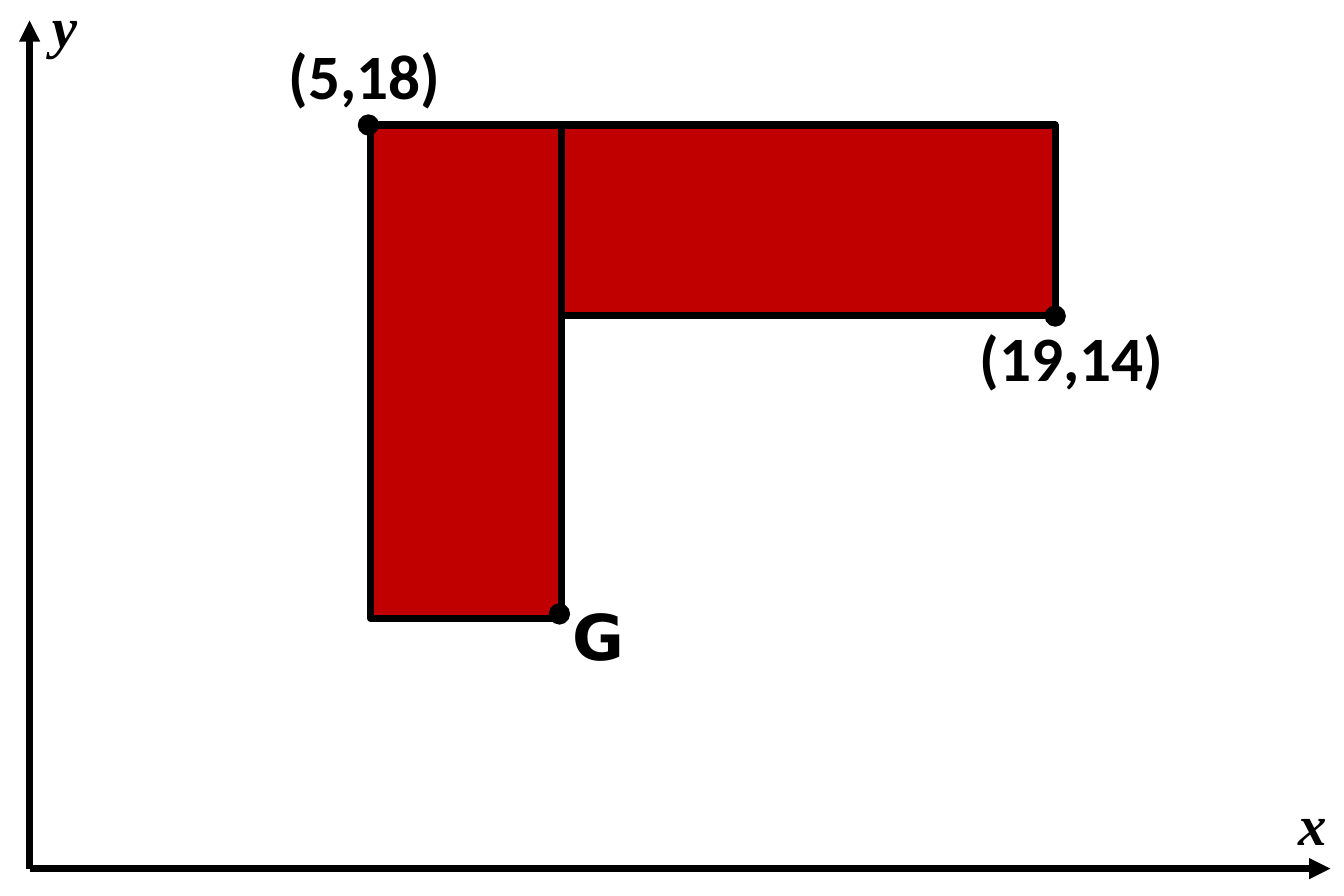
from pptx import Presentation
from pptx.dml.color import RGBColor
from pptx.enum.shapes import MSO_CONNECTOR, MSO_SHAPE
from pptx.enum.text import MSO_AUTO_SIZE
from pptx.oxml.ns import qn
from pptx.util import Inches, Pt
from lxml.etree import SubElement

COLORS = {"ink": "000000", "rectangle": "C00000"}
INK = RGBColor.from_string(COLORS["ink"])

deck = Presentation()
deck.slide_width, deck.slide_height = Inches(5.91), Inches(3.94)
page = deck.slides.add_slide(deck.slide_layouts[6])


def add_outlined(preset, left, top, width, height, fill, line_width):
    shape = page.shapes.add_shape(
        preset, Inches(left), Inches(top), Inches(width), Inches(height))
    shape.shadow.inherit = False
    shape.fill.solid()
    shape.fill.fore_color.rgb = RGBColor.from_string(COLORS[fill])
    shape.line.color.rgb = INK
    shape.line.width = Pt(line_width)


# Axes, from the origin to the arrow tips
origin_x, origin_y = 0.13, 3.82
for tip_x, tip_y in [(origin_x, 0.09), (5.85, origin_y)]:
    axis = page.shapes.add_connector(
        MSO_CONNECTOR.STRAIGHT, Inches(origin_x), Inches(origin_y),
        Inches(tip_x), Inches(tip_y))
    axis.line.color.rgb = INK
    axis.line.width = Pt(2.25)
    SubElement(axis.line._get_or_add_ln(), qn("a:tailEnd"), type="triangle")
    SubElement(axis._element.spPr, qn("a:effectLst"))

# Two equal rectangles, one upright and one lying
long_side, short_side = 2.17, 0.84
add_outlined(MSO_SHAPE.RECTANGLE, 1.63, 0.55, short_side, long_side, "rectangle", 2.25)
add_outlined(MSO_SHAPE.RECTANGLE, 2.47, 0.55, long_side, short_side, "rectangle", 2.25)

# Corner points
for left, top in [(1.58, 0.51), (2.42, 2.66), (4.6, 1.35)]:
    add_outlined(MSO_SHAPE.OVAL, left, top, 0.08, 0.08, "ink", 1)

# Axis names and point labels
labels = [
    ("y", 0.13, -0.09, 0.31, 0.4, "Times New Roman", 18, True),
    ("x", 5.61, 3.42, 0.33, 0.4, "Times New Roman", 18, True),
    ("G", 2.42, 2.58, 0.43, 0.44, "DejaVu Sans", 20, False),
    ("(5,18)", 1.17, 0.11, 0.88, 0.44, "Calibri", 20, False),
    ("(19,14)", 4.21, 1.35, 1.02, 0.44, "Calibri", 20, False),
]
for text, left, top, width, height, font_name, size, italic in labels:
    box = page.shapes.add_textbox(
        Inches(left), Inches(top), Inches(width), Inches(height))
    frame = box.text_frame
    frame.word_wrap = False
    frame.auto_size = MSO_AUTO_SIZE.SHAPE_TO_FIT_TEXT
    frame.text = text
    font = frame.paragraphs[0].runs[0].font
    font.name = font_name
    font.size = Pt(size)
    font.bold = True
    font.italic = italic
    font.color.rgb = INK

deck.save("out.pptx")
